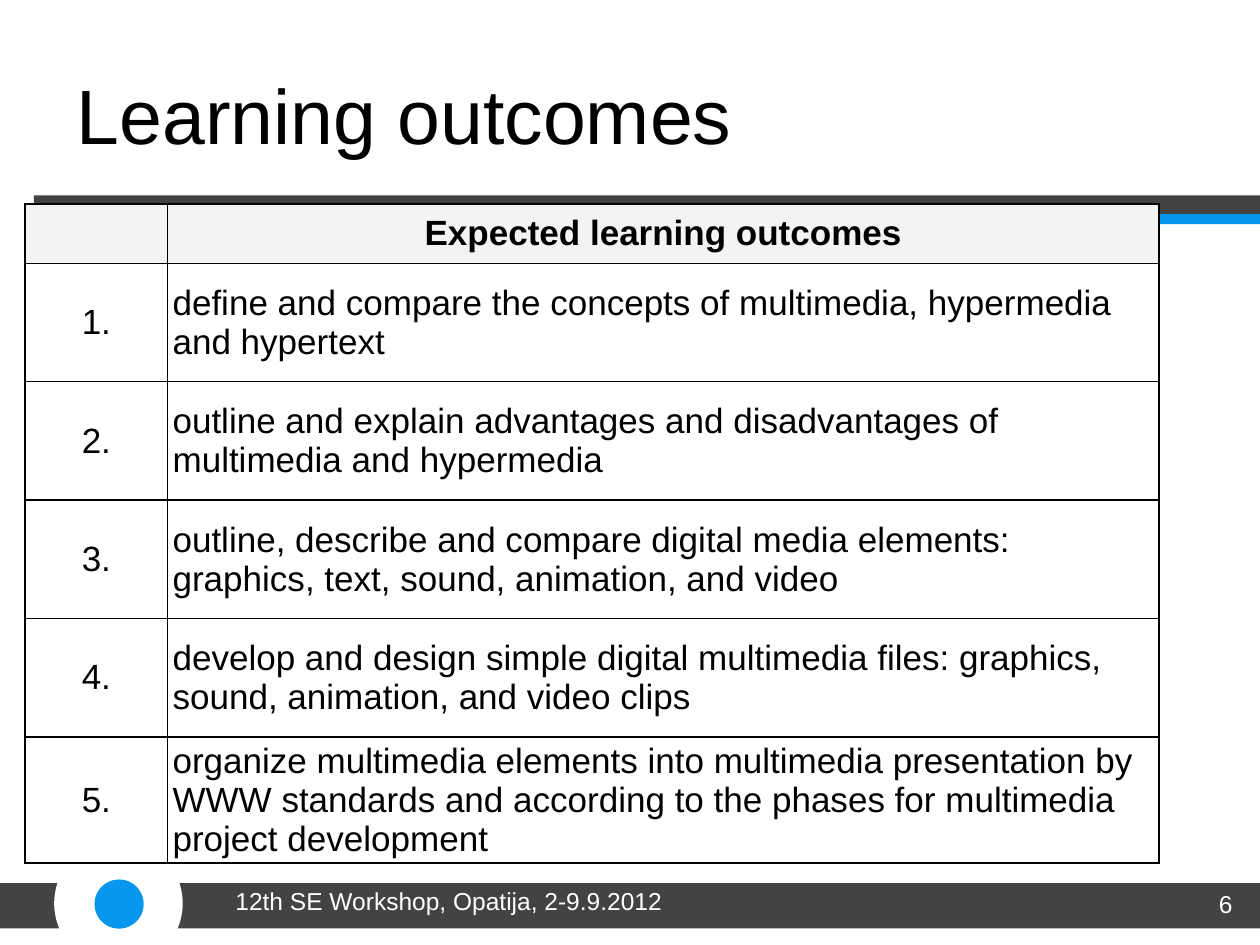
from pptx import Presentation
from pptx.dml.color import RGBColor
from pptx.enum.shapes import MSO_SHAPE
from pptx.enum.text import MSO_ANCHOR, PP_ALIGN
from pptx.oxml.xmlchemy import OxmlElement
from pptx.util import Inches, Pt

RECT, OVAL = MSO_SHAPE.RECTANGLE, MSO_SHAPE.OVAL
MIDDLE, TOP = MSO_ANCHOR.MIDDLE, MSO_ANCHOR.TOP
LEFT, CENTER, RIGHT = PP_ALIGN.LEFT, PP_ALIGN.CENTER, PP_ALIGN.RIGHT

COLORS = {"dark": "434343", "blue": "0996ED", "white": "FFFFFF",
          "black": "000000", "header": "F3F3F3"}

DECORATION = [
    (RECT, 1.38, 7.01, 8.62, 0.36, "dark"),
    (RECT, 0, 7.01, 0.51, 0.36, "dark"),
    (OVAL, 0.43, 6.66, 1.02, 1.02, "white"),
    (OVAL, 0.75, 6.98, 0.39, 0.39, "blue"),
    (RECT, 0.27, 1.55, 9.73, 0.16, "dark"),
    (RECT, 0.43, 1.7, 9.57, 0.08, "blue"),
]

OUTCOMES = [
    "define and compare the concepts of multimedia, hypermedia and hypertext",
    "outline and explain advantages and disadvantages of multimedia and hypermedia",
    "outline, describe and compare digital media elements: graphics, text, sound, "
    "animation, and video",
    "develop and design simple digital multimedia files: graphics, sound, "
    "animation, and video clips",
    "organize multimedia elements into multimedia presentation by WWW standards "
    "and according to the phases for multimedia project development",
]


def rgb(name):
    return RGBColor.from_string(COLORS[name])


def write(tf, text, size, color, align=LEFT, bold=False):
    """Fill the first paragraph of a text frame and return it."""
    p = tf.paragraphs[0]
    p.text = text
    p.alignment = align
    p.font.name = "Arial"
    p.font.size = Pt(size)
    p.font.bold = bold
    p.font.color.rgb = rgb(color)
    return p


def add_decoration(s, kind, x, y, w, h, color):
    sp = s.shapes.add_shape(kind, Inches(x), Inches(y), Inches(w), Inches(h))
    sp.shadow.inherit = False
    sp.fill.solid()
    sp.fill.fore_color.rgb = rgb(color)
    sp.line.fill.background()


def add_title(s, text):
    sp = s.shapes.title
    sp.left, sp.top = Inches(0.51), Inches(0.28)
    sp.width, sp.height = Inches(8.74), Inches(1.25)
    sp.text_frame.vertical_anchor = MIDDLE
    write(sp.text_frame, text, 44, "black")


def add_footer_text(s, text, x, y, w, align):
    sp = s.shapes.add_textbox(Inches(x), Inches(y), Inches(w), Inches(0.52))
    tf = sp.text_frame
    tf.word_wrap = True
    tf.vertical_anchor = TOP
    write(tf, text, 14, "white", align)


def set_borders(cell):
    """Draw a black 1 pt line on all four sides, before the cell's fill."""
    tcPr = cell._tc.get_or_add_tcPr()
    for i, side in enumerate(("lnL", "lnR", "lnT", "lnB")):
        ln = OxmlElement(f"a:{side}")
        ln.set("w", str(Pt(1)))
        fill = OxmlElement("a:solidFill")
        color = OxmlElement("a:srgbClr")
        color.set("val", COLORS["black"])
        fill.append(color)
        ln.append(fill)
        tcPr.insert(i, ln)


def format_cell(cell, text, align, header):
    cell.vertical_anchor = MIDDLE
    cell.margin_left = cell.margin_right = Inches(0.04)
    cell.margin_top = cell.margin_bottom = 0
    p = write(cell.text_frame, text, 20, "black", align, bold=header)
    p.space_before = p.space_after = Pt(6)
    if header:
        cell.fill.solid()
        cell.fill.fore_color.rgb = rgb("header")
    else:
        cell.fill.background()
    set_borders(cell)


def add_outcomes_table(s):
    rows = [("", "Expected learning outcomes")]
    rows += [(f"{n}.", text) for n, text in enumerate(OUTCOMES, 1)]
    table = s.shapes.add_table(len(rows), 2, Inches(0.2), Inches(1.62),
                               Inches(9), Inches(5.17)).table
    table.horz_banding = False
    table.columns[0].width = Inches(1.13)
    table.columns[1].width = Inches(7.87)
    for i, row in enumerate(rows):
        header = i == 0
        table.rows[i].height = Inches(0.47 if header else 0.94)
        for j, text in enumerate(row):
            align = CENTER if header or j == 0 else LEFT
            format_cell(table.cell(i, j), text, align, header)


def main():
    prs = Presentation()
    prs.slide_width, prs.slide_height = Inches(10), Inches(7.5)
    s = prs.slides.add_slide(prs.slide_layouts[5])
    for item in DECORATION:
        add_decoration(s, *item)
    add_title(s, "Learning outcomes")
    add_footer_text(s, "6", 9.33, 7.01, 0.55, RIGHT)
    add_outcomes_table(s)
    add_footer_text(s, "12th SE Workshop, Opatija, 2-9.9.2012", 1.77, 6.98, 7.32, LEFT)
    prs.save("out.pptx")


if __name__ == "__main__":
    main()
